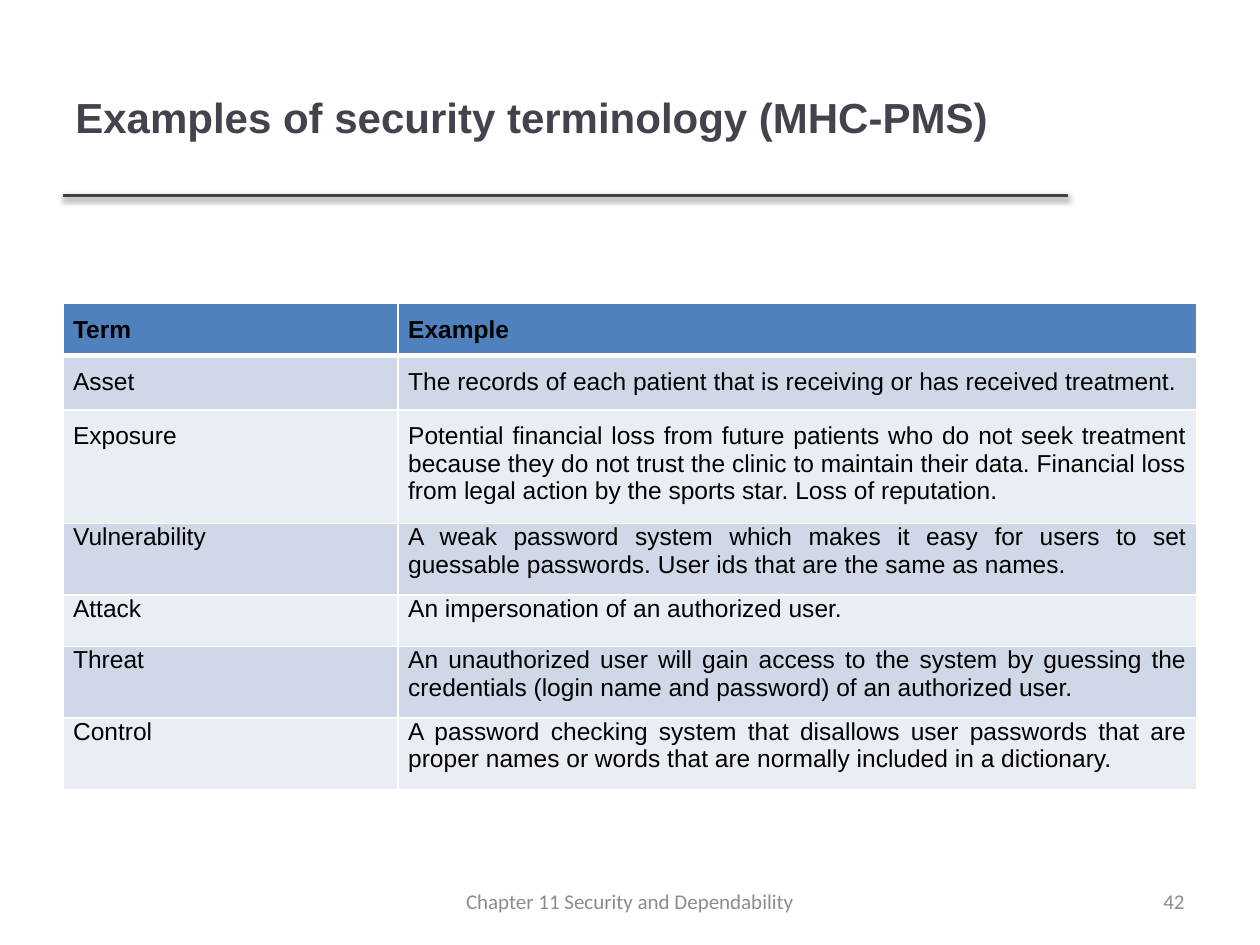
import pptx
import pptx.util
import pptx.oxml
import pptx.oxml.ns
import pptx.dml.color
import pptx.enum.shapes
import pptx.enum.text
from dataclasses import dataclass

Inches = pptx.util.Inches
Pt = pptx.util.Pt
ALIGN = pptx.enum.text.PP_ALIGN


@dataclass(frozen=True)
class Theme:
    body_font: str = "Arial"
    footer_font: str = "Calibri"
    title_size: int = 24
    table_size: int = 14
    footer_size: int = 12
    title: str = "46424D"
    rule: str = "404040"
    text: str = "000000"
    footer: str = "8C8C8C"
    header_fill: str = "4F81BD"
    bands: tuple = ("D0D8E8", "E9EDF4")
    border: str = "FFFFFF"


THEME = Theme()

TERMS = [
    ("Term", "Example"),
    ("Asset", "The records of each patient that is receiving or has received treatment."),
    ("Exposure", "Potential financial loss from future patients who do not seek treatment "
     "because they do not trust the clinic to maintain their data. Financial loss from "
     "legal action by the sports star. Loss of reputation."),
    ("Vulnerability", "A weak password system which makes it easy for users to set "
     "guessable passwords. User ids that are the same as names."),
    ("Attack", "An impersonation of an authorized user."),
    ("Threat", "An unauthorized user will gain access to the system by guessing the "
     "credentials (login name and password) of an authorized user."),
    ("Control", "A password checking system that disallows user passwords that are "
     "proper names or words that are normally included in a dictionary."),
]


def rgb(value):
    return pptx.dml.color.RGBColor.from_string(value)


def format_text(frame, font, size, color, align, bold=False):
    for para in frame.paragraphs:
        para.alignment = align
        for span in para.runs:
            span.font.name = font
            span.font.size = Pt(size)
            span.font.color.rgb = rgb(color)
            span.font.bold = bold


def add_text(page, box, text, font, size, color, align, bold=False):
    frame = page.shapes.add_textbox(*map(Inches, box)).text_frame
    frame.word_wrap = True
    frame.vertical_anchor = pptx.enum.text.MSO_ANCHOR.MIDDLE
    frame.text = text
    format_text(frame, font, size, color, align, bold)


def add_title(page, box):
    """Title with a shadowed rule along the bottom of its box."""
    left, top, width, height = box
    bottom = top + height
    rule = page.shapes.add_connector(
        pptx.enum.shapes.MSO_CONNECTOR.STRAIGHT,
        Inches(left), Inches(bottom), Inches(left + width), Inches(bottom))
    rule.line.color.rgb = rgb(THEME.rule)
    rule.line.width = Pt(2)
    rule.element.spPr.append(pptx.oxml.parse_xml(
        f'<a:effectLst {pptx.oxml.ns.nsdecls("a")}>'
        f'<a:outerShdw blurRad="{Pt(3.1)}" dist="{Pt(1.6)}" dir="5400000" rotWithShape="0">'
        '<a:srgbClr val="000000"><a:alpha val="38000"/></a:srgbClr>'
        '</a:outerShdw></a:effectLst>'))
    add_text(page, box, "Examples of security terminology (MHC-PMS)", THEME.body_font,
             THEME.title_size, THEME.title, ALIGN.LEFT, bold=True)


def set_borders(cell, top, bottom):
    # Borders come before the fill in the cell properties
    properties = cell._tc.get_or_add_tcPr()
    widths = {"lnL": 1, "lnR": 1, "lnT": top, "lnB": bottom}
    for index, (side, width) in enumerate(widths.items()):
        properties.insert(index, pptx.oxml.parse_xml(
            f'<a:{side} {pptx.oxml.ns.nsdecls("a")} w="{Pt(width)}"><a:solidFill>'
            f'<a:srgbClr val="{THEME.border}"/></a:solidFill></a:{side}>'))


def add_terms_table(page, box):
    left, top, width, row_height = box
    table = page.shapes.add_table(
        len(TERMS), 2, Inches(left), Inches(top), Inches(width),
        Inches(row_height * len(TERMS))).table
    term_width = 2.66
    table.columns[0].width = Inches(term_width)
    table.columns[1].width = Inches(width - term_width)
    for row, texts in enumerate(TERMS):
        table.rows[row].height = Inches(row_height)
        header = row == 0
        fill = THEME.header_fill if header else THEME.bands[(row - 1) % 2]
        for column, text in enumerate(texts):
            cell = table.cell(row, column)
            cell.text = text
            cell.margin_left = cell.margin_right = Inches(0.08)
            cell.margin_top = Inches(0.1 if row < 3 else 0)
            cell.margin_bottom = Inches(0 if header else 0.1)
            cell.fill.solid()
            cell.fill.fore_color.rgb = rgb(fill)
            set_borders(cell, top=3 if row == 1 else 1, bottom=3 if header else 1)
            format_text(cell.text_frame, THEME.body_font, THEME.table_size,
                        THEME.text, ALIGN.JUSTIFY, bold=header)


def add_footer(page, box):
    """Chapter name in the centre, page number at the right."""
    left, top, width, height = box
    chapter_width, number_width = 3.17, 2.33
    style = (THEME.footer_font, THEME.footer_size, THEME.footer)
    add_text(page, (left + (width - chapter_width) / 2, top, chapter_width, height),
             "Chapter 11 Security and Dependability", *style, ALIGN.CENTER)
    add_text(page, (left + width - number_width, top, number_width, height),
             "42", *style, ALIGN.RIGHT)


def main():
    deck = pptx.Presentation()
    deck.slide_width = Inches(10)
    deck.slide_height = Inches(7.5)
    page = deck.slides.add_slide(deck.slide_layouts[6])
    add_title(page, (0.5, 0.3, 7.98, 1.25))
    add_terms_table(page, (0.5, 2.41, 9, 0.41))
    add_footer(page, (0.5, 6.95, 9, 0.4))
    deck.save("out.pptx")


if __name__ == "__main__":
    main()
